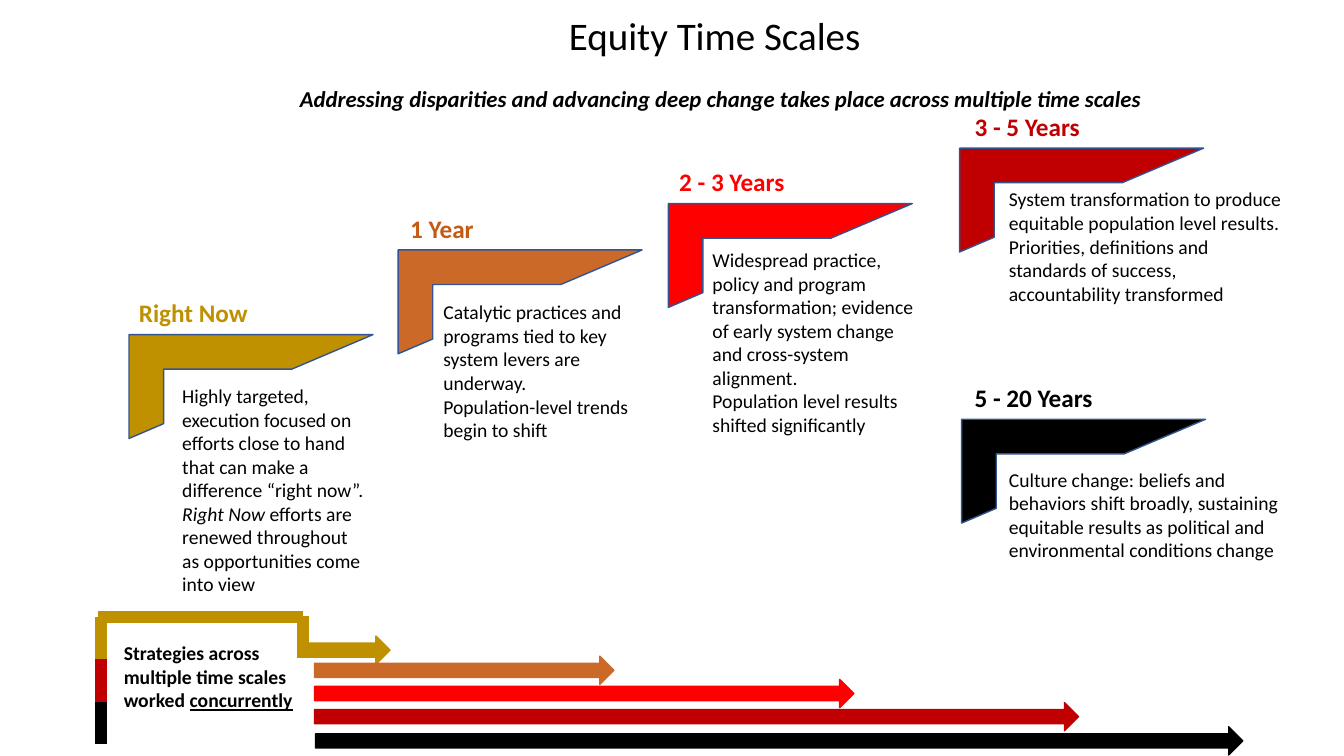
import pptx
import pptx.dml.color
import pptx.enum.shapes
import pptx.enum.text
import pptx.oxml.ns
import pptx.util
from lxml import etree

COLORS = {
    "gold": "BF9000",
    "copper": "CB6A28",
    "rust": "C55A11",
    "red": "FF0000",
    "crimson": "C00000",
    "black": "000000",
    "outline": "325491",
}
COLS, ROWS = 133.33, 75
SHAPE = pptx.enum.shapes.MSO_SHAPE
Pt = pptx.util.Pt


class Deck:
    """Draws styled elements on the current slide, placed by grid column and row."""

    def __init__(self, width, height, font="Calibri"):
        self.prs = pptx.Presentation()
        self.prs.slide_width = pptx.util.Inches(width)
        self.prs.slide_height = pptx.util.Inches(height)
        self.font = font
        self.slide = self.prs.slides.add_slide(self.prs.slide_layouts[6])

    def grid(self, *values):
        units = self.prs.slide_width / COLS, self.prs.slide_height / ROWS
        return [round(v * units[i % 2]) for i, v in enumerate(values)]

    def color(self, name):
        return pptx.dml.color.RGBColor.from_string(COLORS[name])

    def shape(self, kind, box, fill, line):
        sp = self.slide.shapes.add_shape(kind, *self.grid(*box))
        sp.shadow.inherit = False
        sp.fill.solid()
        sp.fill.fore_color.rgb = self.color(fill)
        sp.line.color.rgb = self.color(line)
        sp.line.width = Pt(1)

    def line(self, ends, color, width=8.5):
        sp = self.slide.shapes.add_connector(
            pptx.enum.shapes.MSO_CONNECTOR.STRAIGHT, *self.grid(*ends))
        sp.line.color.rgb = self.color(color)
        sp.line.width = Pt(width)
        etree.SubElement(sp._element.spPr, pptx.oxml.ns.qn("a:effectLst"))

    def text(self, box, paragraphs, size=14, color="black", bold=False, grow=True):
        sp = self.slide.shapes.add_textbox(*self.grid(*box))
        tf = sp.text_frame
        tf.word_wrap = True
        if grow:
            tf.auto_size = pptx.enum.text.MSO_AUTO_SIZE.SHAPE_TO_FIT_TEXT
        for i, runs in enumerate(paragraphs):
            p = tf.add_paragraph() if i else tf.paragraphs[0]
            p.font.name, p.font.size, p.font.bold = self.font, Pt(size), bold
            p.font.color.rgb = self.color(color)
            for content, *styles in runs:
                r = p.add_run()
                r.text = content
                for style in styles:
                    setattr(r.font, style, True)
        return tf


STAGES = [
    ("Right Now", "gold", "gold", (12.8, 33.2), 12.8, (17.1, 37.6, 20.3, 22.2),
     [[("Highly targeted, execution focused on efforts close to hand that can "
        "make a difference “right now”. ",),
       ("Right Now ", "italic"),
       ("efforts are renewed throughout as opportunities come into view",)]]),
    ("1 Year", "copper", "rust", (39.5, 24.8), 39.7, (43, 29.3, 21.6, 15.1),
     [[("Catalytic practices and programs tied to key system levers are underway.",)],
      [("Population-level trends begin to shift",)]]),
    ("2 - 3 Years", "red", "red", (66.3, 20.2), 66.4, (69.7, 24.1, 22.6, 26.9),
     [[("Widespread practice, policy and program transformation; evidence of "
        "early system change and cross-system alignment.",)],
      [("Population level results shifted significantly",)]]),
    ("3 - 5 Years", "crimson", "crimson", (95.2, 14.7), 95.7, (99.1, 18.1, 29.5, 15.1),
     [[("System transformation to produce equitable population level results. "
        "Priorities, definitions and standards of success, accountability "
        "transformed",)]]),
    ("5 - 20 Years", "black", "black", (95.4, 41.6), 95.7, (99.1, 45.9, 30.3, 12.8),
     [[("Culture change: beliefs and behaviors shift broadly, sustaining equitable "
        "results as political and environmental conditions change",)]]),
]
ARROWS = [
    (30.1, 63.1, 8.6),
    (31.2, 65.1, 29.7),
    (31.2, 67.4, 53.5),
    (31.2, 69.7, 75.8),
    (31.3, 72.1, 92),
]


def main():
    deck = Deck(13.333, 7.5)

    for label, fill, ink, (x, y), label_x, body_box, body in STAGES:
        deck.shape(SHAPE.HALF_FRAME, (x, y, 24.2, 10.3), fill, "outline")
        deck.text((label_x, y - 4.15, 23.6, 4), [[(label,)]], 18, ink, True)
        deck.text(body_box, body)

    tf = deck.text((16.7, 0.6, 108.4, 10.4), [
        [("Equity Time Scales",)],
        [("Addressing disparities and advancing deep change takes place across "
          "multiple time scales", "bold", "italic")],
    ], grow=False)
    title, subtitle = tf.paragraphs
    title.alignment = subtitle.alignment = pptx.enum.text.PP_ALIGN.CENTER
    title.font.size, subtitle.font.size = Pt(27.9), Pt(16.2)
    subtitle.space_before = Pt(19)
    subtitle._p.get_or_add_pPr().set("marL", str(Pt(8)))

    for i, color in enumerate(["gold", "crimson", "black"]):
        top = 61.2 + 4.2 * i
        deck.line((10, top, 10, top + 4.2), color)
    deck.line((30.1, 61.1, 30.1, 65.3), "gold")
    deck.line((9.7, 61.2, 30.1, 61.2), "gold")
    deck.text((11.3, 63.1, 21, 8.1), [
        [("Strategies across multiple time scales worked ",),
         ("concurrently", "underline")]], bold=True)

    for (x, y, length), stage in zip(ARROWS, STAGES):
        deck.shape(SHAPE.RIGHT_ARROW, (x, y, length, 2.8), stage[1], stage[1])

    deck.prs.save("out.pptx")


if __name__ == "__main__":
    main()
